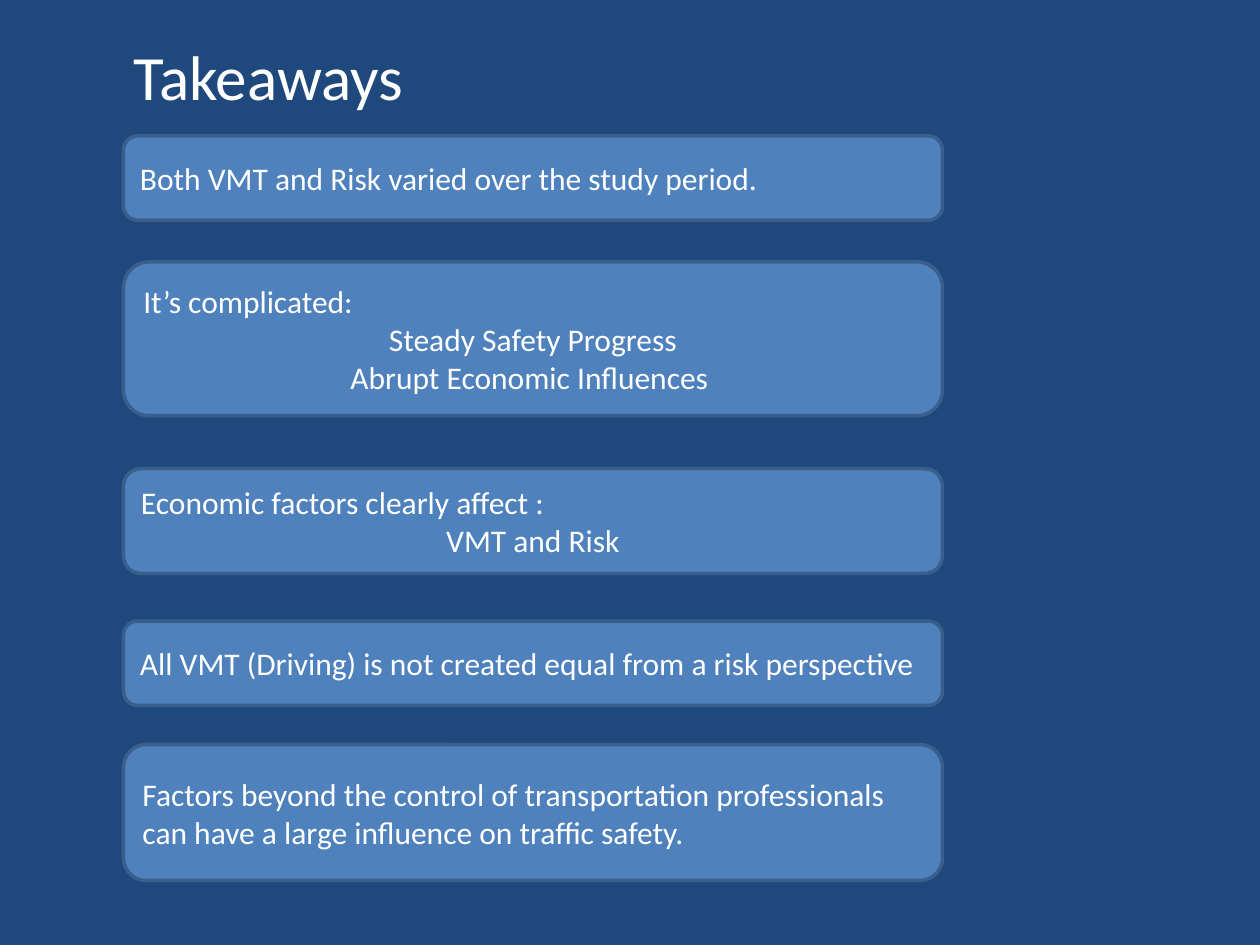
import pptx
import pptx.util
import pptx.dml.color
import pptx.enum.shapes
import pptx.enum.text

Cm = pptx.util.Cm
Pt = pptx.util.Pt
ALIGN = pptx.enum.text.PP_ALIGN
ANCHOR = pptx.enum.text.MSO_ANCHOR

NAVY = pptx.dml.color.RGBColor(0x1F, 0x49, 0x7D)
BLUE = pptx.dml.color.RGBColor(0x4F, 0x81, 0xBD)
EDGE = pptx.dml.color.RGBColor(0x3A, 0x5F, 0x8C)
WHITE = pptx.dml.color.RGBColor(0xFF, 0xFF, 0xFF)

TAKEAWAYS = [
    (2.74, 1.7, "Both VMT and Risk varied over the study period.", []),
    (5.28, 3.1, "It’s complicated:",
     ["Steady Safety Progress", "Abrupt Economic Influences "]),
    (9.45, 2.11, "Economic factors clearly affect :", ["VMT and Risk"]),
    (12.52, 1.7,
     "All VMT (Driving) is not created equal from a risk perspective", []),
    (15.01, 2.74,
     "Factors beyond the control of transportation professionals "
     "can have a large influence on traffic safety.", []),
]


def write_line(paragraph, text, size=18, align=ALIGN.LEFT):
    paragraph.alignment = align
    run = paragraph.add_run()
    run.text = text
    run.font.name = "Calibri"
    run.font.size = Pt(size)
    run.font.color.rgb = WHITE


def add_title(slide, text):
    title = slide.shapes.add_textbox(Cm(2.44), Cm(0.64), Cm(20.12), Cm(1.8))
    title.text_frame.word_wrap = True
    write_line(title.text_frame.paragraphs[0], text, size=36)


def add_takeaway(slide, top, height, statement, details):
    panel = slide.shapes.add_shape(
        pptx.enum.shapes.MSO_SHAPE.ROUNDED_RECTANGLE,
        Cm(2.49), Cm(top), Cm(16.51), Cm(height))
    panel.shadow.inherit = False
    panel.fill.solid()
    panel.fill.fore_color.rgb = BLUE
    panel.line.color.rgb = EDGE
    panel.line.width = Pt(2)
    frame = panel.text_frame
    frame.word_wrap = True
    frame.vertical_anchor = ANCHOR.MIDDLE
    write_line(frame.paragraphs[0], statement)
    for detail in details:
        write_line(frame.add_paragraph(), detail, align=ALIGN.CENTER)


def main():
    deck = pptx.Presentation()
    deck.slide_width = Cm(25.4)
    deck.slide_height = Cm(19.05)
    slide = deck.slides.add_slide(deck.slide_layouts[6])
    slide.background.fill.solid()
    slide.background.fill.fore_color.rgb = NAVY
    add_title(slide, "Takeaways")
    for top, height, statement, details in TAKEAWAYS:
        add_takeaway(slide, top, height, statement, details)
    deck.save("out.pptx")


if __name__ == "__main__":
    main()
